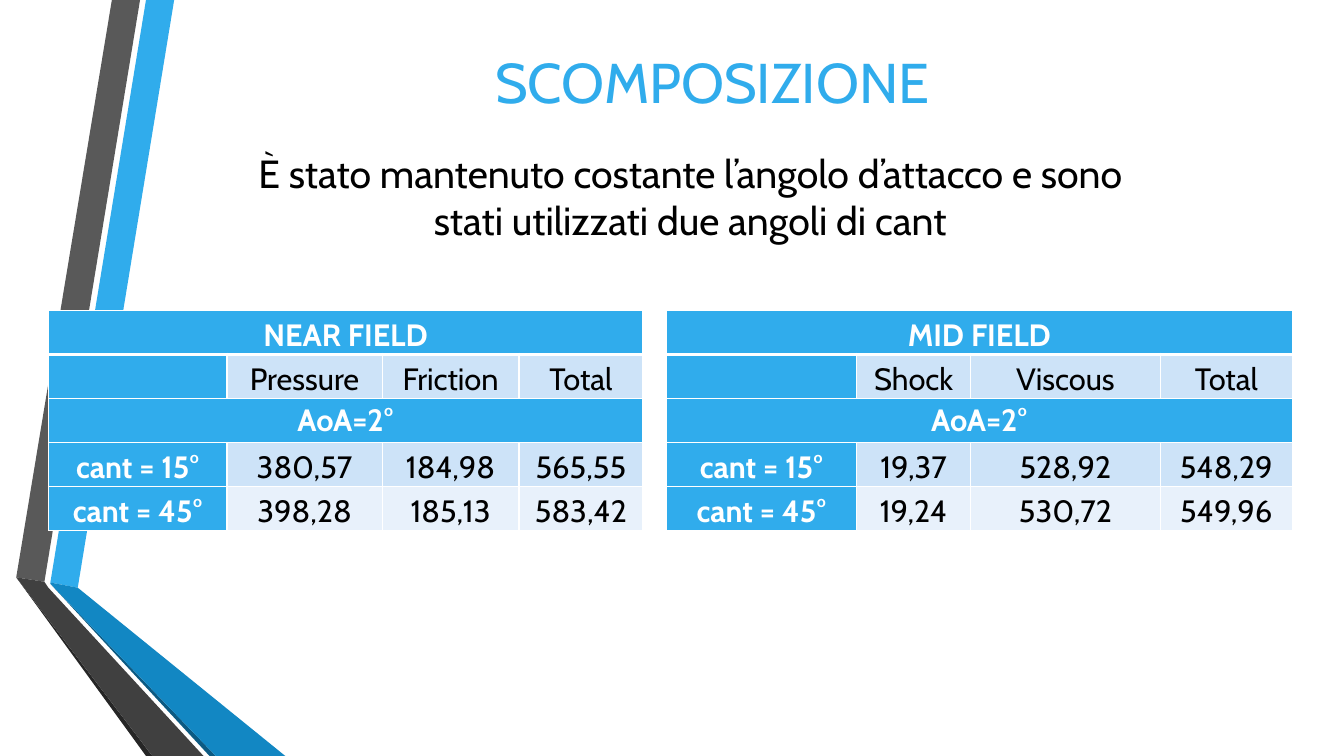
from lxml.etree import SubElement
from pptx import Presentation
from pptx.dml.color import RGBColor
from pptx.enum.text import MSO_ANCHOR, PP_ALIGN
from pptx.oxml.ns import qn
from pptx.util import Cm, Pt

FONT = "Cabin"
BLUE, PALE, LIGHT = "30ACEC", "CDE3F8", "E8F1FB"
WHITE, BLACK = "FFFFFF", "000000"
FOOT = 19.05

# Fill and corners in centimetres, from back to front
BANDS = [
    (BLUE, [(1.27, 14.68), (1.96, 14.81), (4.39, 0), (3.68, 0)]),
    ("595959", [(3.53, 0), (2.82, 0), (0.41, 14.55), (1.12, 14.66)]),
    ("262626", [(0.41, 14.55), (3.68, FOOT), (3.84, FOOT)]),
    ("0C5A82", [(1.27, 14.71), (5.28, FOOT), (5.44, FOOT)]),
    ("1287C3", [(1.27, 14.68), (1.27, 14.71), (5.44, FOOT), (7.19, FOOT),
                (1.96, 14.81)]),
    ("404040", [(5.13, FOOT), (1.22, 14.81), (1.12, 14.66), (0.41, 14.55),
                (3.84, FOOT)]),
]

NEAR = [
    ["NEAR FIELD"],
    ["", "Pressure", "Friction", "Total"],
    ["AoA=2°"],
    ["cant = 15°", "380,57", "184,98", "565,55"],
    ["cant = 45°", "398,28", "185,13", "583,42"],
]
MID = [
    ["MID FIELD"],
    ["", "Shock", "Viscous", "Total"],
    ["AoA=2°"],
    ["cant = 15°", "19,37", "528,92", "548,29"],
    ["cant = 45°", "19,24", "530,72", "549,96"],
]


def paint(fill, color):
    fill.solid()
    fill.fore_color.rgb = RGBColor.from_string(color)


def write(frame, text, size, color, bold=False):
    """Put one centred paragraph in the frame and return it."""
    frame.text = text
    para = frame.paragraphs[0]
    para.alignment = PP_ALIGN.CENTER
    para.font.name = FONT
    para.font.size = Pt(size)
    para.font.bold = bold
    para.font.color.rgb = RGBColor.from_string(color)
    return para


def add_band(slide, color, points):
    points = [(Cm(x), Cm(y)) for x, y in points]
    pen = slide.shapes.build_freeform(*points[0])
    pen.add_line_segments(points[1:], close=True)
    band = pen.convert_to_shape()
    band.shadow.inherit = False
    band.line.fill.background()
    paint(band.fill, color)


def add_title(slide, text):
    title = slide.shapes.title
    title.left, title.top = Cm(3.35), Cm(0.89)
    title.width, title.height = Cm(29.21), Cm(2.29)
    title.text_frame.vertical_anchor = MSO_ANCHOR.MIDDLE
    write(title.text_frame, text, 40, BLUE)


def add_text(slide, text):
    box = slide.shapes.add_textbox(Cm(5.82), Cm(3.2), Cm(23.14), Cm(3.05))
    frame = box.text_frame
    frame.word_wrap = True
    frame.vertical_anchor = MSO_ANCHOR.BOTTOM
    write(frame, text, 28, BLACK).space_after = Pt(6)


def add_edges(cell, row):
    """Draw white borders, thick under the heading row."""
    props = cell._tc.get_or_add_tcPr()
    for side in "LRTB":
        thick = (row, side) in ((0, "B"), (1, "T"))
        line = SubElement(props, qn("a:ln" + side), w=str(Pt(3 if thick else 1)))
        fill = SubElement(line, qn("a:solidFill"))
        SubElement(fill, qn("a:srgbClr"), val=WHITE)


def add_grid(slide, left, widths, rows):
    high = Cm(1.11)
    frame = slide.shapes.add_table(len(rows), len(widths), Cm(left), Cm(7.82),
                                   Cm(sum(widths)), high * len(rows))
    table = frame.table
    for col, width in zip(table.columns, widths):
        col.width = Cm(width)
    for r, texts in enumerate(rows):
        table.rows[r].height = high
        wide = len(texts) == 1
        for c in range(len(widths)):
            cell = table.cell(r, c)
            head = wide or c == 0
            add_edges(cell, r)
            paint(cell.fill, BLUE if head else LIGHT if r == 4 else PALE)
            cell.margin_left = cell.margin_right = Cm(0.18)
            cell.margin_top = cell.margin_bottom = 0
            cell.vertical_anchor = MSO_ANCHOR.MIDDLE if r == 2 else MSO_ANCHOR.BOTTOM
            if c < len(texts):
                write(cell.text_frame, texts[c], 22, WHITE if head else BLACK, head)
        if wide:
            table.cell(r, 0).merge(table.cell(r, len(widths) - 1))


def main():
    deck = Presentation()
    deck.slide_width, deck.slide_height = Cm(33.87), Cm(FOOT)
    slide = deck.slides.add_slide(deck.slide_layouts[5])
    for color, points in BANDS:
        add_band(slide, color, points)
    add_title(slide, "SCOMPOSIZIONE")
    add_text(slide, "È stato mantenuto costante l’angolo d’attacco e sono "
                    "stati utilizzati due angoli di cant")
    add_grid(slide, 16.79, [4.8, 2.87, 4.78, 3.33], MID)
    add_grid(slide, 1.22, [4.5, 3.91, 3.45, 3.12], NEAR)
    deck.save("out.pptx")


if __name__ == "__main__":
    main()
